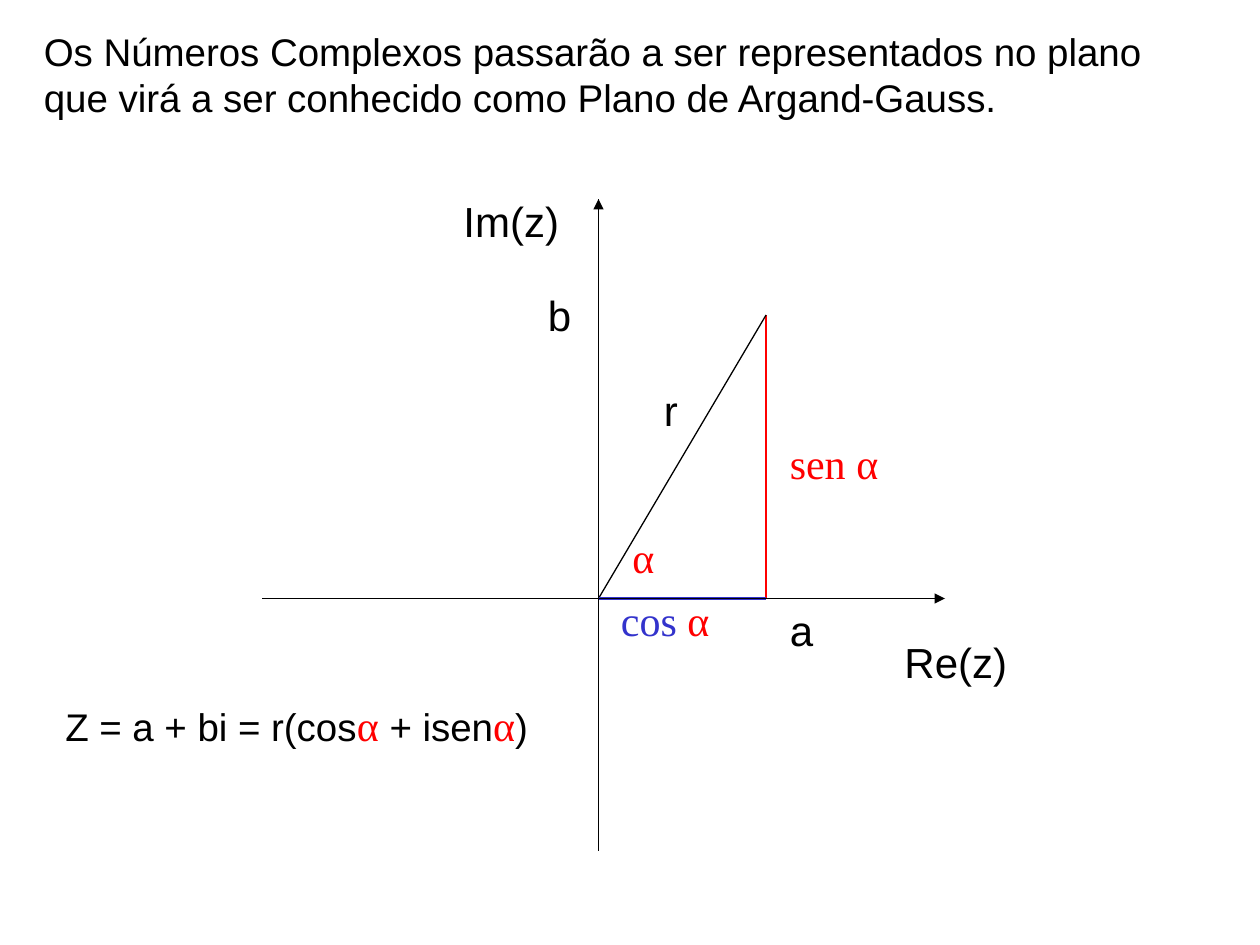
from pptx import Presentation
from pptx.dml.color import RGBColor
from pptx.enum.shapes import MSO_CONNECTOR
from pptx.enum.text import MSO_AUTO_SIZE
from pptx.oxml.ns import qn
from pptx.util import Inches, Pt
from lxml import etree

BLACK = RGBColor(0x00, 0x00, 0x00)
RED = RGBColor(0xFF, 0x00, 0x00)
BLUE = RGBColor(0x33, 0x33, 0xCC)
STRAIGHT = MSO_CONNECTOR.STRAIGHT
GROW = MSO_AUTO_SIZE.SHAPE_TO_FIT_TEXT
SANS, SERIF = "Arial", "Times New Roman"

# Run styles: font, size, colour
BODY = (SANS, 22, BLACK)
LABEL = (SANS, 24, BLACK)
ANGLE = (SERIF, 24, RED)
COSINE = (SERIF, 24, BLUE)

# Origin of the plane and the point z = a + bi
OX, OY = 4.75, 4.75
ZX, ZY = 6.08, 2.5

prs = Presentation()
prs.slide_width, prs.slide_height = Inches(10), Inches(7.5)
slide = prs.slides.add_slide(prs.slide_layouts[6])


def add_line(x1, y1, x2, y2, color=BLACK, width=0.75, arrow=False):
    line = slide.shapes.add_connector(
        STRAIGHT, Inches(x1), Inches(y1), Inches(x2), Inches(y2))
    line.line.color.rgb = color
    line.line.width = Pt(width)
    if arrow:
        etree.SubElement(line.line._get_or_add_ln(), qn("a:tailEnd"), type="triangle")
    etree.SubElement(line._element.spPr, qn("a:effectLst"))


def add_text(x, y, w, h, runs, wrap=False):
    box = slide.shapes.add_textbox(Inches(x), Inches(y), Inches(w), Inches(h))
    frame = box.text_frame
    frame.word_wrap = wrap
    frame.auto_size = GROW
    for text, (font, size, color) in runs:
        run = frame.paragraphs[0].add_run()
        run.text = text
        run.font.name = font
        run.font.size = Pt(size)
        run.font.color.rgb = color


# Introduction
intro = ("Os Números Complexos passarão a ser representados no plano "
         "que virá a ser conhecido como Plano de Argand-Gauss.")
add_text(0.25, 0.17, 9.33, 0.83, [(intro, BODY)], wrap=True)

# Triangle, then the axes above it
add_line(OX, 1.58, OX, 6.75)
add_line(ZX, ZY, ZX, OY, RED)
add_line(OX, OY, ZX, ZY)
add_line(OX, OY, ZX, OY, BLUE, 2.25)
add_line(OX, 6.67, OX, 1.58, arrow=True)
add_line(2.08, OY, 7.5, OY, arrow=True)

# Labels of the plane: text, style, left, top, width
labels = [
    ("α", ANGLE, 4.92, 4.17, 0.41),
    ("sen α", ANGLE, 6.17, 3.42, 0.94),
    ("r", LABEL, 5.17, 3, 0.31),
    ("Im(z)", LABEL, 3.58, 1.5, 0.96),
    ("Re(z)", LABEL, 7.08, 5, 1.02),
    ("b", LABEL, 4.25, 2.25, 0.39),
    ("a", LABEL, 6.17, 4.75, 0.39),
]
for text, style, x, y, w in labels:
    add_text(x, y, w, 0.5, [(text, style)])
add_text(4.83, 4.67, 1.17, 0.5, [("cos ", COSINE), ("α", ANGLE)], wrap=True)

# Polar form
polar = [("Z = a + bi = r(cos", BODY), ("α", ANGLE), (" + isen", BODY),
         ("α", ANGLE), (")", BODY)]
add_text(0.42, 5.5, 9.33, 0.5, polar, wrap=True)

prs.save("out.pptx")
